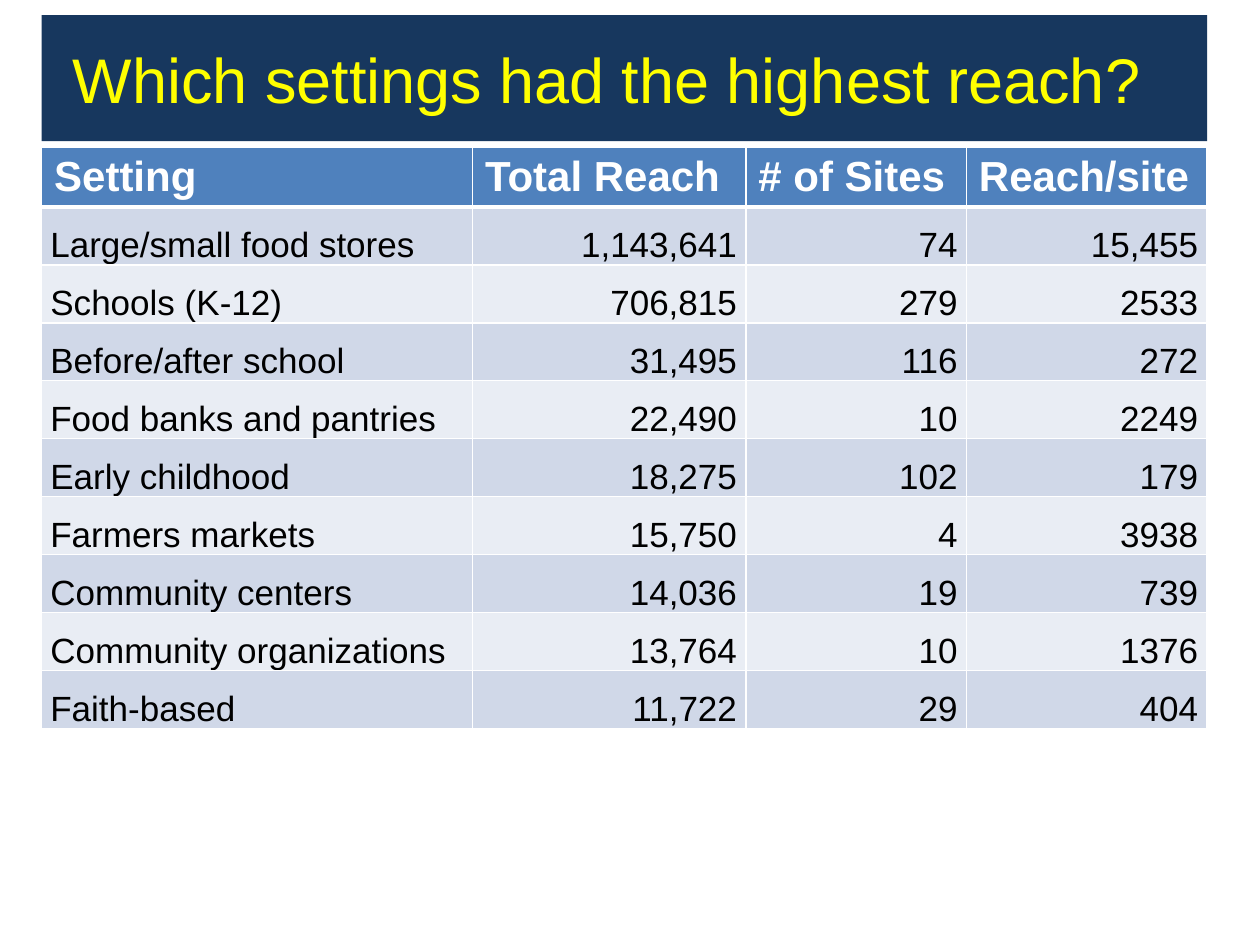
from lxml import etree
from pptx import Presentation
from pptx.dml.color import RGBColor
from pptx.enum.text import MSO_ANCHOR, PP_ALIGN
from pptx.oxml.ns import qn
from pptx.util import Inches, Pt

LEFT, CENTER, RIGHT = PP_ALIGN.LEFT, PP_ALIGN.CENTER, PP_ALIGN.RIGHT
TOP, MIDDLE, BOTTOM = MSO_ANCHOR.TOP, MSO_ANCHOR.MIDDLE, MSO_ANCHOR.BOTTOM
TITLE_ONLY = 5

COLUMN_WIDTHS = [3.42, 2.17, 1.75, 1.91]
ROW_HEIGHT = 0.46
HEADER = ["Setting", "Total Reach", "# of Sites", "Reach/site"]
SETTINGS = [
    ["Large/small food stores", "1,143,641", "74", "15,455"],
    ["Schools (K-12)", "706,815", "279", "2533"],
    ["Before/after school", "31,495", "116", "272"],
    ["Food banks and pantries", "22,490", "10", "2249"],
    ["Early childhood", "18,275", "102", "179"],
    ["Farmers markets", "15,750", "4", "3938"],
    ["Community centers", "14,036", "19", "739"],
    ["Community organizations", "13,764", "10", "1376"],
    ["Faith-based", "11,722", "29", "404"],
]


def color(value):
    return RGBColor.from_string(value)


def set_attributes(target, values):
    for name, value in values.items():
        setattr(target, name, value)


class ReachSlide:
    """Holds the style and the current slide, and adds its elements."""

    font_name = "Arial"
    header_fill = "4F81BD"
    band_fills = ["D0D8E8", "E9EDF4"]
    header_font = {"size": Pt(24), "bold": True}
    body_font = {"size": Pt(20), "bold": False}
    header_cell = {"vertical_anchor": TOP}
    body_cell = {
        "vertical_anchor": BOTTOM,
        "margin_left": Inches(0.07),
        "margin_right": Inches(0.07),
        "margin_top": 0,
        "margin_bottom": 0,
    }

    def __init__(self, presentation):
        self.slide = presentation.slides.add_slide(presentation.slide_layouts[TITLE_ONLY])

    def set_text(self, text_frame, text, alignment, font_color, font_values):
        paragraph = text_frame.paragraphs[0]
        paragraph.text = text
        paragraph.alignment = alignment
        font = paragraph.runs[0].font
        set_attributes(font, {"name": self.font_name, **font_values})
        font.color.rgb = color(font_color)

    def add_title(self, text):
        title = self.slide.shapes.title
        set_attributes(title, {
            "left": Inches(0.33), "top": Inches(0.12),
            "width": Inches(9.25), "height": Inches(1),
        })
        title.fill.solid()
        title.fill.fore_color.rgb = color("17375E")
        set_attributes(title.text_frame, {
            "word_wrap": True, "vertical_anchor": MIDDLE,
            "margin_left": Inches(0.1), "margin_right": Inches(0.38),
            "margin_top": Inches(0.1), "margin_bottom": Inches(0.1),
        })
        self.set_text(title.text_frame, text, CENTER, "FFFF00", {"size": Pt(36)})

    def add_borders(self, cell, widths):
        properties = cell._tc.get_or_add_tcPr()
        for position, (tag, width) in enumerate(widths.items()):
            line = etree.Element(qn(f"a:{tag}"), w=str(Pt(width)))
            fill = etree.SubElement(line, qn("a:solidFill"))
            etree.SubElement(fill, qn("a:srgbClr"), val="FFFFFF")
            properties.insert(position, line)

    def add_cell(self, cell, text, row, column):
        is_header = row == 0
        set_attributes(cell, self.header_cell if is_header else self.body_cell)
        cell.fill.solid()
        fill = self.header_fill if is_header else self.band_fills[(row - 1) % 2]
        cell.fill.fore_color.rgb = color(fill)
        alignment = LEFT if is_header or column == 0 else RIGHT
        font_color = "FFFFFF" if is_header else "000000"
        font_values = self.header_font if is_header else self.body_font
        self.set_text(cell.text_frame, text, alignment, font_color, font_values)
        top, bottom = (3 if row == 1 else 1), (3 if is_header else 1)
        self.add_borders(cell, {"lnL": 1, "lnR": 1, "lnT": top, "lnB": bottom})

    def add_table(self, rows):
        table = self.slide.shapes.add_table(
            len(rows), len(COLUMN_WIDTHS), Inches(0.33), Inches(1.17),
            Inches(sum(COLUMN_WIDTHS)), Inches(ROW_HEIGHT * len(rows)),
        ).table
        for column, width in zip(table.columns, COLUMN_WIDTHS):
            column.width = Inches(width)
        for row, texts in enumerate(rows):
            table.rows[row].height = Inches(ROW_HEIGHT)
            for column, text in enumerate(texts):
                self.add_cell(table.cell(row, column), text, row, column)


def main():
    presentation = Presentation()
    presentation.slide_width = Inches(10)
    presentation.slide_height = Inches(7.5)
    reach_slide = ReachSlide(presentation)
    reach_slide.add_title("Which settings had the highest reach?")
    reach_slide.add_table([HEADER, *SETTINGS])
    presentation.save("out.pptx")


if __name__ == "__main__":
    main()
